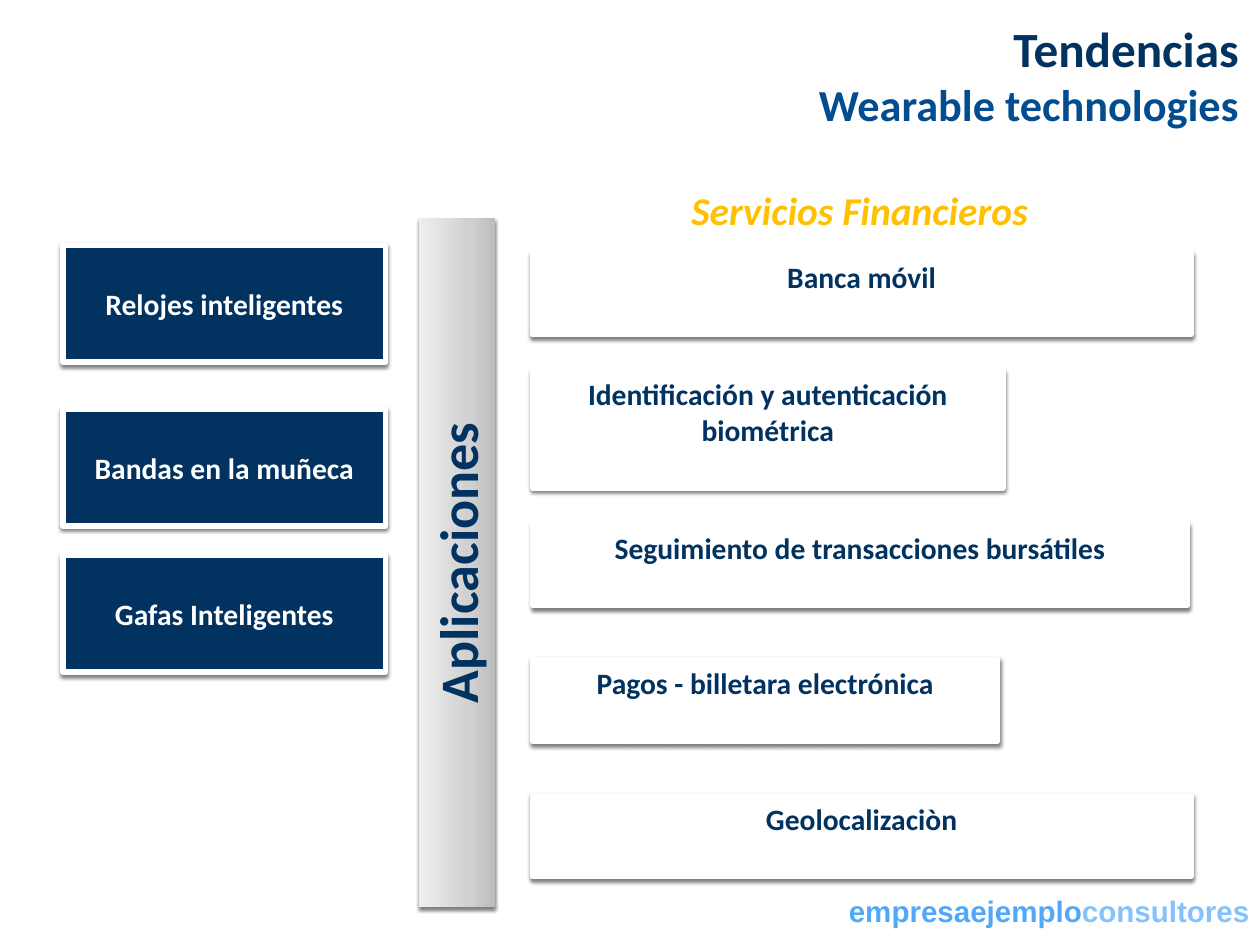
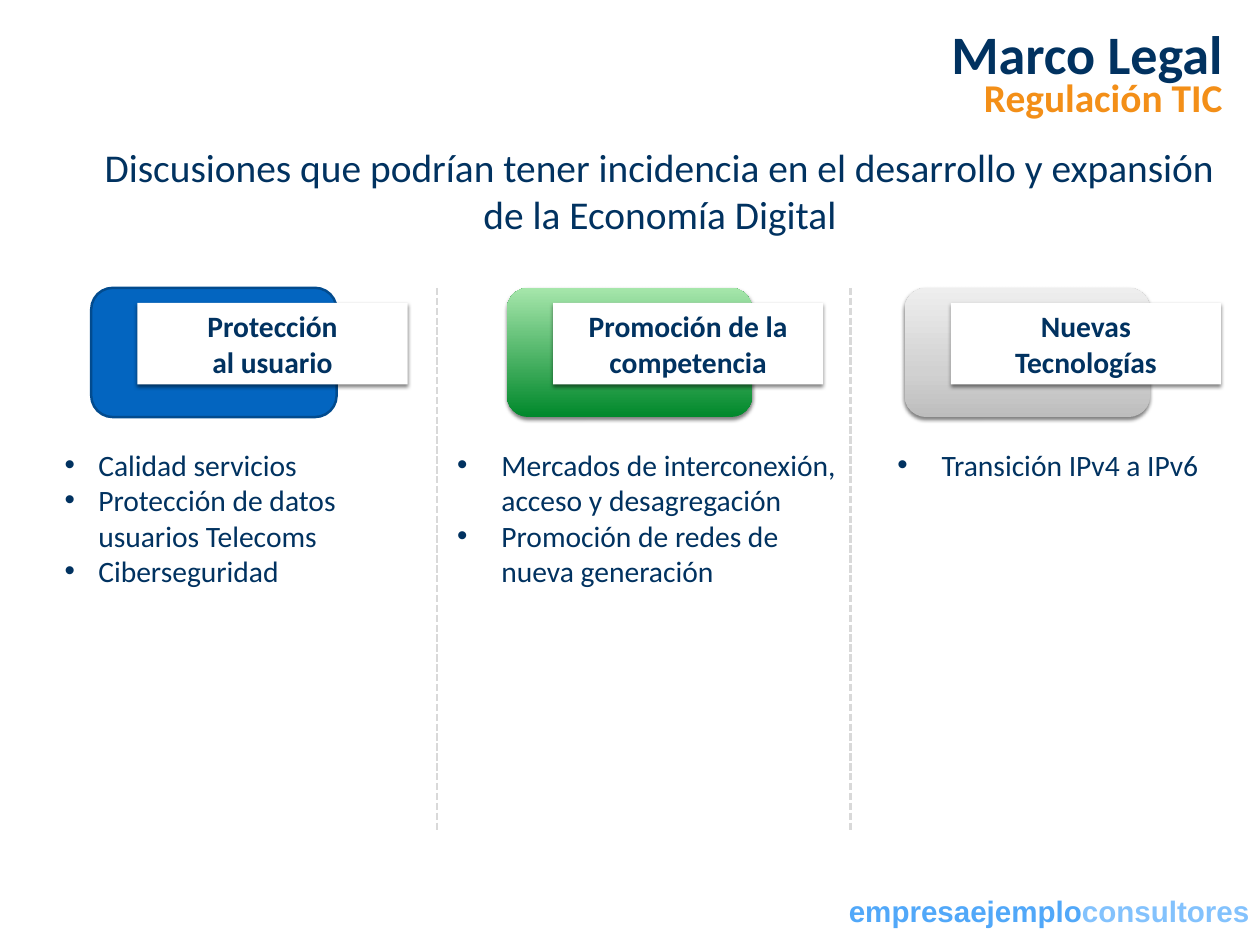
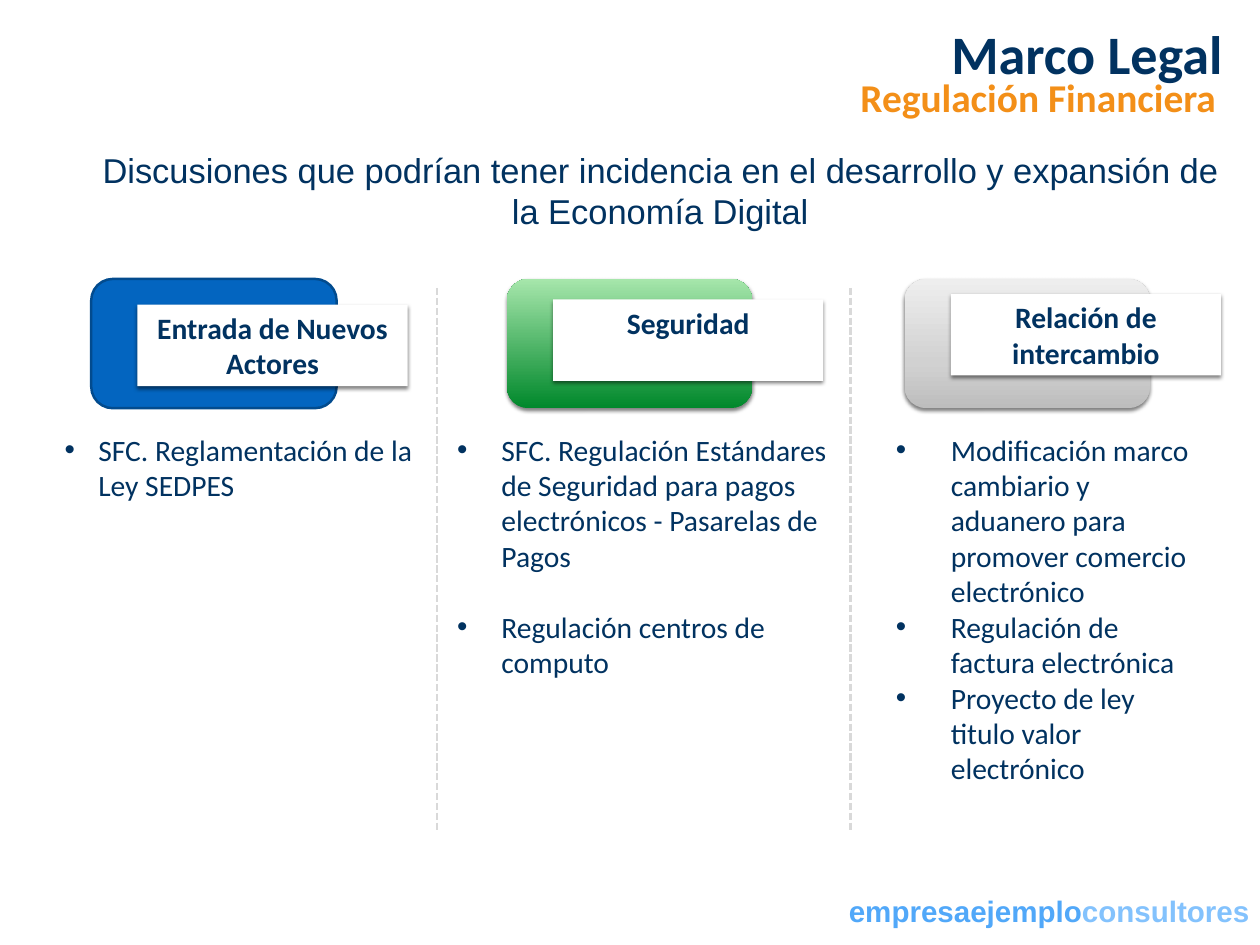
from lxml.etree import SubElement
from pptx import Presentation
from pptx.dml.color import RGBColor
from pptx.enum.dml import MSO_LINE
from pptx.enum.shapes import MSO_CONNECTOR, MSO_SHAPE
from pptx.enum.text import MSO_ANCHOR, MSO_AUTO_SIZE, PP_ALIGN
from pptx.oxml.ns import qn
from pptx.util import Inches, Pt

W, H = Inches(14.22), Inches(10.67)
NAVY, BLUE, WHITE = "013260", "024C90", "FFFFFF"
ORANGE, YELLOW, RULE = "F38F18", "FFC000", "D9D9D9"
GRAY = [(0, "BDBDBD"), (35, "D1D1D1"), (100, "EEEEEE")]
GREEN = [(0, "00882B"), (100, "A6E6AB")]
LEFT, CENTER, RIGHT = PP_ALIGN.LEFT, PP_ALIGN.CENTER, PP_ALIGN.RIGHT
TOP, MIDDLE = MSO_ANCHOR.TOP, MSO_ANCHOR.MIDDLE
LEAD = ("Discusiones que podrían tener incidencia en el desarrollo "
        "y expansión de la Economía Digital")

# Left, width, offset of the badge, badge fill (shares of the slide, in %)
COLUMNS = [(4.71, 30.03, 2.53, "0365C0"),
           (35.86, 31.65, 4.37, GREEN),
           (70.68, 24.96, 1.12, GRAY)]


def rgb(color):
    return RGBColor.from_string(color)


def place(left, top, width, height):
    """Turn percentages of the slide into lengths."""
    return [int(v * side / 100) for v, side in
            zip((left, top, width, height), (W, H, W, H))]


def add_run(p, text, size=24, color=NAVY, bold=False, italic=False, font="Calibri"):
    r = p.add_run()
    r.text = text
    f = r.font
    f.name, f.size, f.bold, f.italic = font, Pt(size), bold, italic
    f.color.rgb = rgb(color)


def add_bullet(p, indent):
    pPr = p._p.get_or_add_pPr()
    pPr.set("marL", str(Inches(indent)))
    pPr.set("indent", str(-Inches(indent)))
    SubElement(pPr, qn("a:buFont")).set("typeface", "Arial")
    SubElement(pPr, qn("a:buChar")).set("char", "•")


def write(sp, lines, align=CENTER, anchor=MIDDLE, inset=0.06, bullet=0, gap=0, **fmt):
    """Fill a shape; a line is a string or a list of (text, format) runs."""
    tf = sp.text_frame
    tf.word_wrap, tf.auto_size = True, MSO_AUTO_SIZE.NONE
    tf.vertical_anchor = anchor
    tf.margin_left = tf.margin_right = tf.margin_top = tf.margin_bottom = Inches(inset)
    for i, line in enumerate(lines):
        p = tf.add_paragraph() if i else tf.paragraphs[0]
        p.alignment = align
        if i and gap:
            p.space_before = Pt(gap)
        if bullet:
            add_bullet(p, bullet)
        for text, extra in [(line, {})] if isinstance(line, str) else line:
            add_run(p, text, **{**fmt, **extra})


def add_text(s, box, lines, **fmt):
    write(s.shapes.add_textbox(*place(*box)), lines, **fmt)


def add_box(s, box, fill, line=None, width=4.5, kind=MSO_SHAPE.RECTANGLE, shadow=True):
    """Add a shape; a fill is a colour or a list of gradient stops."""
    sp = s.shapes.add_shape(kind, *place(*box))
    if isinstance(fill, str):
        sp.fill.solid()
        sp.fill.fore_color.rgb = rgb(fill)
    else:
        sp.fill.gradient()
        sp.fill.gradient_angle = 90
        stops = sp._element.spPr.find(".//" + qn("a:gsLst"))
        stops.clear()
        for pos, color in fill:
            gs = SubElement(stops, qn("a:gs"), pos=str(pos * 1000))
            SubElement(gs, qn("a:srgbClr"), val=color)
    if line:
        sp.line.color.rgb = rgb(line)
        sp.line.width = Pt(width)
    else:
        sp.line.fill.background()
    sp.shadow.inherit = False
    if shadow:
        effects = sp._element.spPr.find(qn("a:effectLst"))
        outer = SubElement(effects, qn("a:outerShdw"), blurRad=str(Pt(3)),
                           dist=str(Pt(2)), dir="5400000", rotWithShape="0")
        black = SubElement(outer, qn("a:srgbClr"), val="000000")
        SubElement(black, qn("a:alpha"), val="50000")
    return sp


def new_slide(prs, box, title, **fmt):
    """Add a slide with its title and the footer that all slides share."""
    s = prs.slides.add_slide(prs.slide_layouts[5])
    t = s.shapes.title
    t.left, t.top, t.width, t.height = place(*box)
    write(t, title, align=RIGHT, bold=True, **fmt)
    add_text(s, (16.6, 94, 83.12, 4.7),
             [[("empresaejemplo", {"color": "51A8F9"}),
               ("consultores", {"color": "83C2FD"})]],
             align=RIGHT, inset=0.08, font="Arial", bold=True)
    return s


def add_divider(s, x):
    left, top, _, height = place(x, 30.46, 0, 57.36)
    c = s.shapes.add_connector(MSO_CONNECTOR.STRAIGHT, left, top, left, top + height)
    c.line.color.rgb = rgb(RULE)
    c.line.width = Pt(2)
    c.line.dash_style = MSO_LINE.SQUARE_DOT
    SubElement(c._element.spPr, qn("a:effectLst"))


def add_topic(s, column, top, label, drop, bullets, list_top, **fmt):
    """Add a badge, its label and the bullets below it to one column."""
    left, width, dx, fill = column
    x = left + dx
    plain = isinstance(fill, str)
    add_box(s, (x, top, 19.48, 13.68), fill, line="024B8E" if plain else None,
            width=2, kind=MSO_SHAPE.ROUNDED_RECTANGLE, shadow=not plain)
    write(add_box(s, (x + 3.66, top + drop, 21.45, 8.62), WHITE),
          label, anchor=TOP, bold=True)
    add_text(s, (left, list_top, width, 36), bullets,
             **{"align": LEFT, "anchor": TOP, **fmt})


def trends_slide(prs):
    s = new_slide(prs, (43.53, 1.03, 55.49, 19.21),
                  ["Tendencias", [("Wearable technologies", {"size": 36, "color": BLUE})]],
                  size=40, anchor=TOP, inset=0.1)
    devices = [("Relojes inteligentes", 25.96), ("Bandas en la muñeca", 43.3),
               ("Gafas Inteligentes", 58.76)]
    for text, top in devices:
        write(add_box(s, (5, top, 25.6, 12.37), NAVY, WHITE), [text],
              color=WHITE, bold=True)

    add_text(s, (44.16, 19.12, 48.17, 6.09), ["Servicios Financieros"],
             size=32, color=YELLOW, bold=True, italic=True)
    services = [("Banca móvil", 26.8, 52.25, 8.62),
                ("Identificación y autenticación biométrica", 39.27, 37.34, 12.37),
                ("Seguimiento de transacciones bursátiles", 55.48, 51.97, 8.62),
                ("Pagos - billetara electrónica", 69.82, 36.92, 8.62),
                ("Geolocalizaciòn", 84.16, 52.25, 8.62)]
    for text, top, width, height in services:
        write(add_box(s, (42.26, top, width, height), WHITE, WHITE), [text],
              anchor=TOP, bold=True)

    bar = add_box(s, (8.93, 55.58, 54.71, 7.97), GRAY)
    bar.rotation = 270
    write(bar, ["Aplicaciones"], size=44, bold=True)


def legal_slide(prs, subtitle, sub_left, lead, top, list_top, topics):
    s = new_slide(prs, (4.29, 1.59, 93.18, 7.97), ["Marco Legal"], size=44)
    add_text(s, (sub_left, 7.22, 67.51, 6.09), [subtitle],
             align=RIGHT, size=32, color=ORANGE, bold=True)
    add_text(s, (6.33, 14.53, 92.12, 11.15), [LEAD], **lead)
    for column, (label, drop, bullets, fmt) in zip(COLUMNS, topics):
        add_topic(s, column, top, label, drop, bullets, list_top, **fmt)
    for x in (34.67, 67.51):
        add_divider(s, x)


def main():
    prs = Presentation()
    prs.slide_width, prs.slide_height = W, H
    trends_slide(prs)
    legal_slide(prs, "Regulación TIC", 29.96, {"size": 32}, 30.46, 46.7, [
        (["Protección", "al usuario"], 1.6,
         ["Calidad servicios", "Protección de datos usuarios Telecoms",
          "Ciberseguridad"], {"bullet": 0.38}),
        (["Promoción de la competencia"], 1.6,
         ["Mercados de interconexión, acceso y desagregación",
          "Promoción de redes de nueva generación"], {"bullet": 0.5}),
        (["Nuevas", "Tecnologías"], 1.6,
         ["Transición IPv4 a IPv6"], {"bullet": 0.5, "align": CENTER}),
    ])
    legal_slide(prs, "Regulación Financiera", 29.47, {"size": 28, "font": "Arial"},
                29.52, 45.1, [
        (["Entrada de Nuevos Actores"], 2.72,
         ["SFC. Reglamentación de la Ley SEDPES"], {"bullet": 0.38}),
        (["Seguridad"], 2.16,
         ["SFC. Regulación Estándares de Seguridad para pagos electrónicos "
          "- Pasarelas de Pagos", "Regulación centros de computo"],
         {"bullet": 0.5, "gap": 29}),
        (["Relación de intercambio"], 1.6,
         ["Modificación marco cambiario y aduanero para promover comercio electrónico",
          "Regulación de factura electrónica",
          "Proyecto de ley titulo valor electrónico"], {"bullet": 0.62}),
    ])
    prs.save("out.pptx")


if __name__ == "__main__":
    main()
